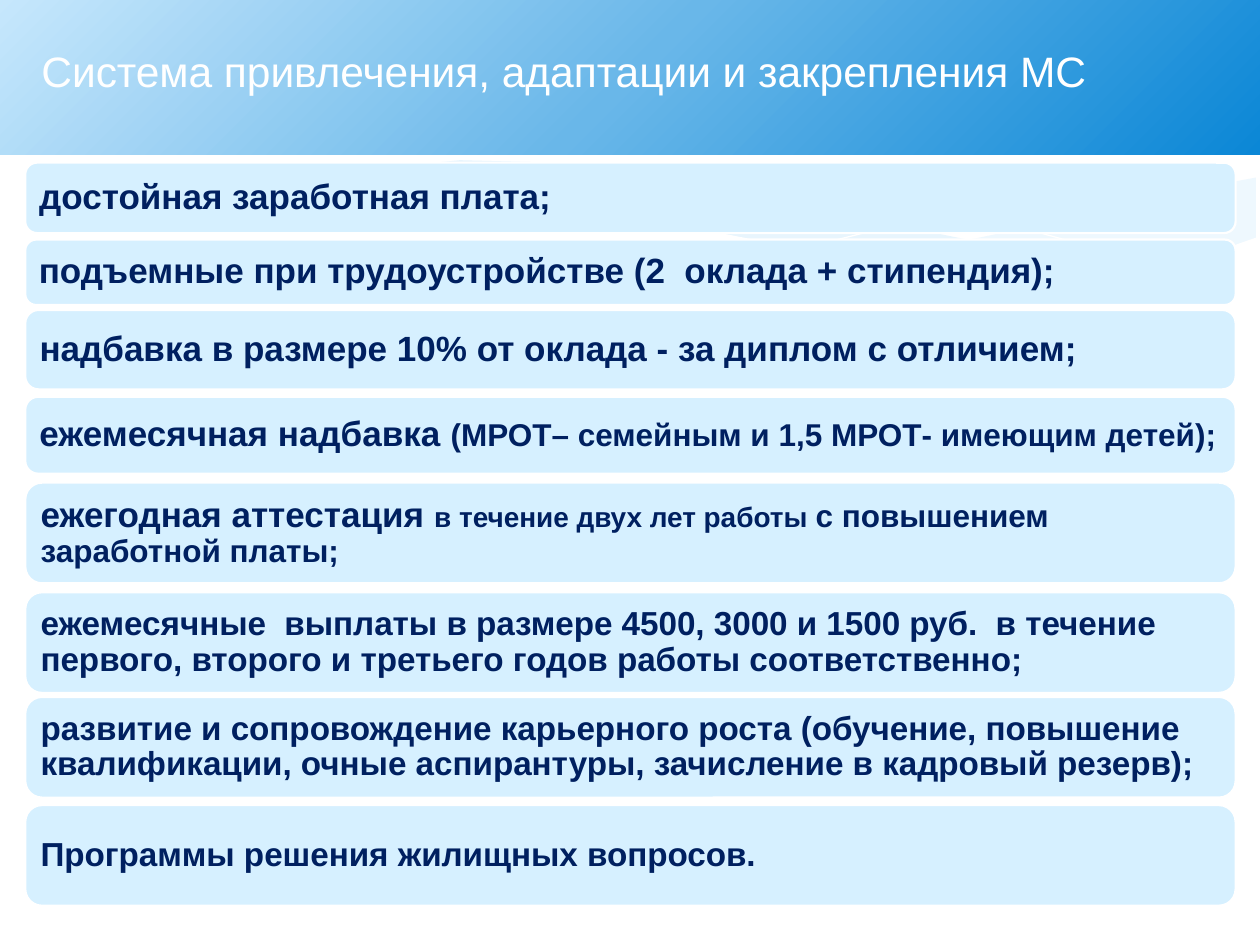
from lxml import etree
from pptx import Presentation, util as u
from pptx.dml.color import RGBColor
from pptx.enum import shapes, text
from pptx.oxml.ns import qn

Cm, Pt = u.Cm, u.Pt
FONT = "Arial"
NAVY, WHITE, PALE, SKY = "002060", "FFFFFF", "D6F0FF", "C6E7FC"
HEADER_STOPS = [(0, "0B87D6"), (50, "69B7E9"), (100, SKY)]

# Wave outlines, in centimetres
RIGHT_WAVE = [(25.32, 3.58), (23.93, 3.84), (22.4, 4.19), (20.32, 4.67), (18.47, 5.06),
              (17.32, 5.26), (18.77, 5.44), (20.37, 5.56), (21.97, 5.55), (23.32, 5.38),
              (24.46, 5.1), (25.32, 4.8)]
MIDDLE_WAVE = [(23.22, 5.44), (21.79, 5.26), (20.22, 4.98), (18.47, 4.62), (16.51, 4.14),
               (14.63, 3.73), (12.95, 3.45), (11.2, 3.28), (9.27, 3.23), (7.8, 3.38),
               (9.73, 3.66), (11.94, 4.14), (14, 4.62), (15.8, 5), (17.42, 5.28),
               (18.9, 5.46), (20.47, 5.58), (22.07, 5.57)]
FALLING_LINE = [(8.38, 3.48), (10.67, 3.28), (13.49, 3.35), (16.69, 3.81),
                (20.07, 4.45), (23.57, 5.41)]
RISING_LINE = [(16.1, 5.03), (18.82, 4.34), (21.77, 3.71), (24, 3.35), (25.3, 3.23)]
WHITE_WAVE = [(25.35, 4.78), (24.41, 5.11), (23.37, 5.31), (22.12, 5.49), (20.68, 5.54),
              (18.97, 5.44), (16.97, 5.18), (14.63, 4.72), (11.89, 4.11), (9.14, 3.53),
              (6.88, 3.25), (4.62, 3.18), (2.95, 3.38), (1.7, 3.73), (1.12, 3.94),
              (1.12, 6.88), (25.35, 6.88)]

# Top, height and (text, size) pieces of each measure
MEASURES = [
    (3.28, 1.42, [("достойная заработная плата;", 20)]),
    (4.83, 1.32, [("подъемные при трудоустройстве (2  оклада + стипендия);", 20)]),
    (6.25, 1.6, [("надбавка в размере 10% от оклада - за диплом с отличием;", 20)]),
    (8, 1.55, [("ежемесячная надбавка ", 20),
               ("(МРОТ– семейным и 1,5 МРОТ- имеющим детей);", 18)]),
    (9.73, 2.03, [("ежегодная аттестация ", 20), ("в течение двух лет работы ", 16),
                  ("с повышением заработной платы;", 18)]),
    (11.94, 2.03, [("ежемесячные  выплаты в размере 4500, 3000 и 1500 руб.  в течение "
                    "первого, второго и третьего годов работы соответственно;", 19)]),
    (14.05, 2.03, [("развитие и сопровождение карьерного роста (обучение, повышение "
                    "квалификации, очные аспирантуры, зачисление в кадровый резерв);", 19)]),
    (16.23, 2.03, [("Программы решения жилищных вопросов.", 19)]),
]


def colour(value):
    return RGBColor.from_string(value)


def paint(shape, fill=None, line=None, width=0, opacity=None):
    shape.shadow.inherit = False
    if fill:
        shape.fill.solid()
        shape.fill.fore_color.rgb = colour(fill)
    else:
        shape.fill.background()
    if line:
        shape.line.color.rgb = colour(line)
        shape.line.width = Pt(width)
    else:
        shape.line.fill.background()
    if opacity:
        tint = shape._element.spPr.find(qn("a:solidFill"))[0]
        etree.SubElement(tint, qn("a:alpha"), val=str(opacity * 1000))


def add_wave(page, points, closed=True, **look):
    start, *rest = [(Cm(x), Cm(y)) for x, y in points]
    builder = page.shapes.build_freeform(*start)
    builder.add_line_segments(rest, close=closed)
    paint(builder.convert_to_shape(), **look)


def add_header(page, width):
    band = page.shapes.add_shape(shapes.MSO_SHAPE.RECTANGLE, 0, 0, width, Cm(3.12))
    paint(band)
    # Radial gradient centred on the bottom right corner
    band.fill.gradient()
    gradient = band._element.spPr.find(qn("a:gradFill"))
    for child in list(gradient):
        gradient.remove(child)
    stops = etree.SubElement(gradient, qn("a:gsLst"))
    for position, value in HEADER_STOPS:
        stop = etree.SubElement(stops, qn("a:gs"), pos=str(position * 1000))
        etree.SubElement(stop, qn("a:srgbClr"), val=value)
    path = etree.SubElement(gradient, qn("a:path"), path="circle")
    etree.SubElement(path, qn("a:fillToRect"), l="100000", t="100000")


def add_span(para, content, size, tint, bold=False):
    span = para.add_run()
    span.text = content
    span.font.name = FONT
    span.font.size = Pt(size)
    span.font.bold = bold
    span.font.color.rgb = colour(tint)


def write(box, pieces, tint, bold=False, align=text.PP_ALIGN.LEFT, spacing=1.0, inset=0):
    frame = box.text_frame
    frame.word_wrap = True
    frame.vertical_anchor = text.MSO_ANCHOR.MIDDLE
    frame.margin_left = frame.margin_right = Cm(inset)
    frame.margin_top = frame.margin_bottom = Cm(inset)
    para = frame.paragraphs[0]
    para.alignment = align
    para.line_spacing = spacing
    for content, size in pieces:
        add_span(para, content, size, tint, bold)


def add_measure(page, top, height, pieces):
    box = page.shapes.add_shape(shapes.MSO_SHAPE.ROUNDED_RECTANGLE,
                                Cm(0.51), Cm(top), Cm(24.4), Cm(height))
    paint(box, fill=PALE, line=WHITE, width=1.25)
    write(box, pieces, NAVY, bold=True, spacing=0.9, inset=0.21)


def main():
    deck = Presentation()
    deck.slide_width, deck.slide_height = Cm(25.4), Cm(19.05)
    page = deck.slides.add_slide(deck.slide_layouts[6])

    # Background waves
    add_wave(page, RIGHT_WAVE, fill=SKY, opacity=29)
    add_wave(page, MIDDLE_WAVE, fill=SKY, opacity=40)
    for points in (FALLING_LINE, RISING_LINE):
        add_wave(page, points, closed=False, line=WHITE)
    add_wave(page, WHITE_WAVE, fill=WHITE)

    # Header band
    add_header(page, deck.slide_width)

    # List of measures
    for measure in MEASURES:
        add_measure(page, *measure)

    # Title
    title = page.shapes.add_textbox(Cm(0.51), Cm(0.53), Cm(21.72), Cm(1.8))
    write(title, [("Система привлечения, адаптации и закрепления МС", 24.3)],
          WHITE, align=text.PP_ALIGN.CENTER)

    deck.save("out.pptx")


if __name__ == "__main__":
    main()
